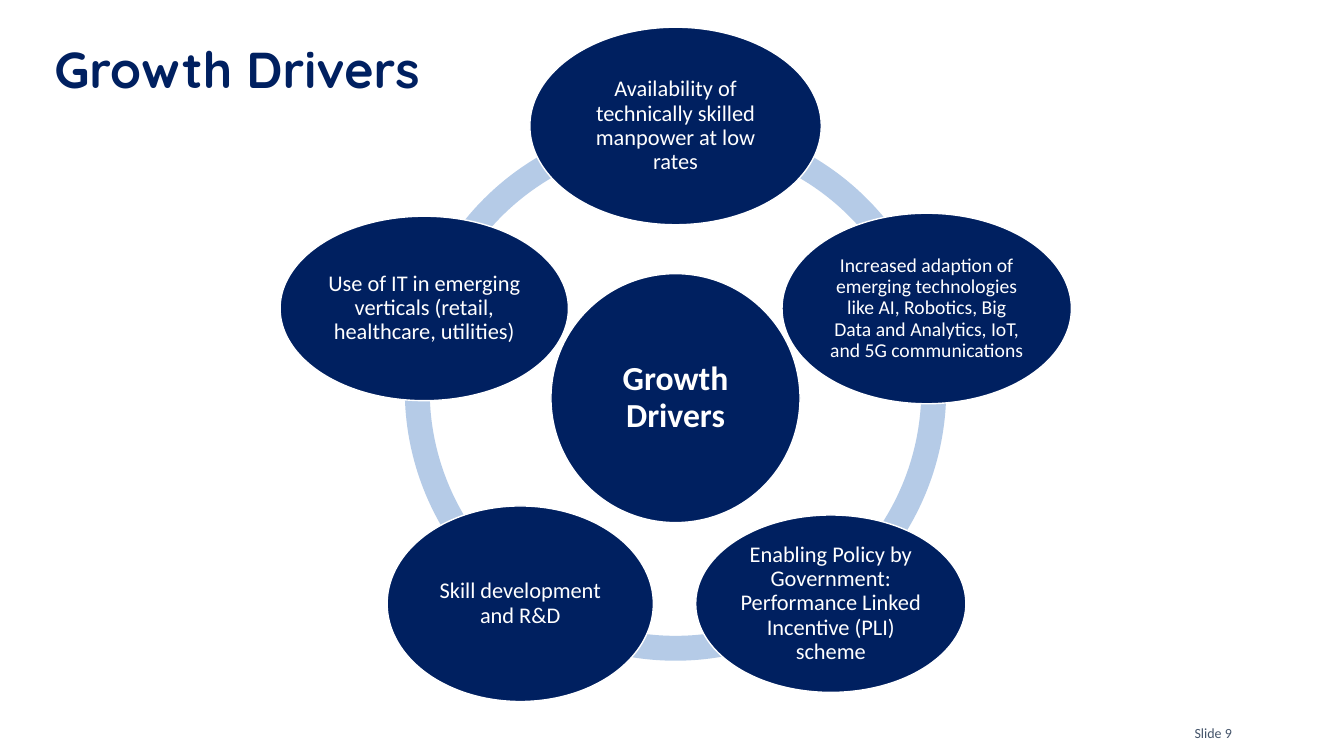
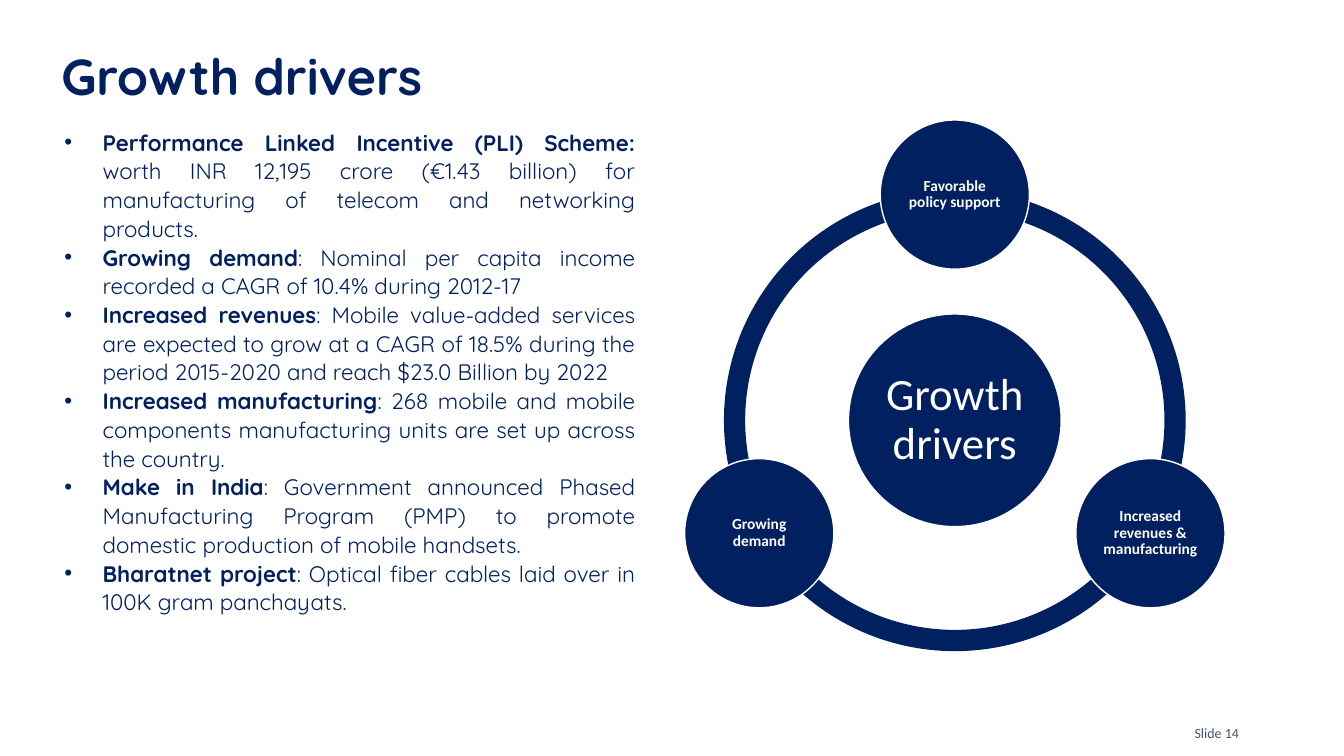
"""Build two growth driver slides, each with a hub-and-ring diagram."""
import dataclasses
import math
import typing

import pptx
import pptx.dml.color
import pptx.enum.shapes
import pptx.enum.text
import pptx.oxml.ns
import pptx.shapes.autoshape
import pptx.slide
import pptx.text.text
import pptx.util
from lxml import etree
from pptx.util import Inches

NAVY = pptx.dml.color.RGBColor(0x00, 0x20, 0x60)
PALE_BLUE = pptx.dml.color.RGBColor(0xB5, 0xCB, 0xE7)
SLATE = pptx.dml.color.RGBColor(0x44, 0x54, 0x6A)
WHITE = pptx.dml.color.RGBColor(0xFF, 0xFF, 0xFF)
HEADING_FONT = "Quicksand"
LABEL_FONT = "Calibri"
RING_THICKNESS = 0.046
BULLET_INDENT = 0.38

Shapes = pptx.enum.shapes.MSO_SHAPE
Align = pptx.enum.text.PP_ALIGN
Anchor = pptx.enum.text.MSO_ANCHOR


@dataclasses.dataclass(frozen=True)
class Oval:
    text: str
    width: float
    height: float
    size: float
    bold: bool = False


@dataclasses.dataclass(frozen=True)
class Cycle:
    center_x: float
    center_y: float
    ring_diameter: float
    orbit_radius: float
    ring_color: pptx.dml.color.RGBColor
    hub: Oval
    nodes: tuple[Oval, ...]
    hub_drop: float = 0


@dataclasses.dataclass(frozen=True)
class Bullet:
    lead: str
    detail: str


DRIVERS = Cycle(
    6.7, 3.87, 5.37, 2.62, PALE_BLUE,
    Oval("Growth Drivers", 2.47, 2.47, 24, True),
    (
        Oval("Availability of technically skilled manpower at low rates", 2.89, 1.96, 16),
        Oval("Increased adaption of emerging technologies like AI, Robotics, Big Data "
             "and Analytics, IoT, and 5G communications", 2.87, 1.89, 14),
        Oval("Enabling Policy by Government: Performance Linked Incentive (PLI) scheme",
             2.68, 1.76, 16),
        Oval("Skill development and R&D", 2.64, 1.94, 16),
        Oval("Use of IT in emerging verticals (retail, healthcare, utilities)", 2.86, 1.83, 16),
    ),
    hub_drop=0.08,
)

TELECOM_DRIVERS = Cycle(
    9.47, 4.17, 4.58, 2.24, NAVY,
    Oval("Growth drivers", 2.11, 2.11, 32),
    tuple(
        Oval(text, 1.48, 1.48, 11, True)
        for text in ("Favorable policy support", "Increased revenues & manufacturing",
                     "Growing demand")
    ),
)

BULLETS = (
    Bullet("Performance Linked Incentive (PLI) Scheme:",
           " worth INR 12,195 crore (€1.43 billion) for manufacturing of telecom and "
           "networking products."),
    Bullet("Growing demand",
           ": Nominal per capita income recorded a CAGR of 10.4% during 2012-17"),
    Bullet("Increased revenues",
           ": Mobile value-added services are expected to grow at a CAGR of 18.5% during "
           "the period 2015-2020 and reach $23.0 Billion by 2022"),
    Bullet("Increased manufacturing",
           ": 268 mobile and mobile components manufacturing units are set up across "
           "the country."),
    Bullet("Make in India",
           ": Government announced Phased Manufacturing Program (PMP) to promote domestic "
           "production of mobile handsets."),
    Bullet("Bharatnet project", ": Optical fiber cables laid over in 100K gram panchayats."),
)


def add_run(
    paragraph: pptx.text.text._Paragraph, text: str, *, size: float, font: str,
    color: pptx.dml.color.RGBColor, bold: bool = False,
) -> None:
    """Append formatted text to a paragraph."""
    run = paragraph.add_run()
    run.text = text
    run.font.size = pptx.util.Pt(size)
    run.font.name = font
    run.font.bold = bold
    run.font.color.rgb = color


def add_filled_shape(
    slide: pptx.slide.Slide, kind: Shapes, left: float, top: float, width: float,
    height: float, fill: pptx.dml.color.RGBColor,
    line: typing.Optional[pptx.dml.color.RGBColor] = None,
) -> pptx.shapes.autoshape.Shape:
    """Add a flat preset shape with an optional one-point outline."""
    shape = slide.shapes.add_shape(kind, Inches(left), Inches(top), Inches(width), Inches(height))
    shape.shadow.inherit = False
    shape.fill.solid()
    shape.fill.fore_color.rgb = fill
    if line is None:
        shape.line.fill.background()
    else:
        shape.line.color.rgb = line
        shape.line.width = pptx.util.Pt(1)
    return shape


def add_text(
    slide: pptx.slide.Slide, text: str, left: float, top: float, width: float, height: float,
    *, size: float, font: str, color: pptx.dml.color.RGBColor, bold: bool = False,
    wrap: bool = True, anchor: Anchor = Anchor.TOP,
) -> None:
    """Add a text box holding one line of text."""
    box = slide.shapes.add_textbox(Inches(left), Inches(top), Inches(width), Inches(height))
    frame = box.text_frame
    frame.word_wrap = wrap
    frame.vertical_anchor = anchor
    add_run(frame.paragraphs[0], text, size=size, font=font, color=color, bold=bold)


def add_oval(slide: pptx.slide.Slide, oval: Oval, center_x: float, center_y: float) -> None:
    """Draw a labelled oval around its center."""
    shape = add_filled_shape(
        slide, Shapes.OVAL, center_x - oval.width / 2, center_y - oval.height / 2,
        oval.width, oval.height, NAVY, WHITE,
    )
    frame = shape.text_frame
    frame.word_wrap = True
    frame.vertical_anchor = Anchor.MIDDLE
    frame.margin_left = frame.margin_right = Inches(0.02)
    frame.margin_top = frame.margin_bottom = Inches(0.02)
    paragraph = frame.paragraphs[0]
    paragraph.alignment = Align.CENTER
    paragraph.line_spacing = 0.9
    add_run(paragraph, oval.text, size=oval.size, font=LABEL_FONT, color=WHITE, bold=oval.bold)


def add_cycle(slide: pptx.slide.Slide, cycle: Cycle) -> None:
    """Draw the ring, the hub and the nodes spaced evenly clockwise from the top."""
    diameter = cycle.ring_diameter
    ring = add_filled_shape(
        slide, Shapes.DONUT, cycle.center_x - diameter / 2, cycle.center_y - diameter / 2,
        diameter, diameter, cycle.ring_color,
    )
    ring.adjustments[0] = RING_THICKNESS
    add_oval(slide, cycle.hub, cycle.center_x, cycle.center_y + cycle.hub_drop)
    for index, node in enumerate(cycle.nodes):
        angle = math.tau * index / len(cycle.nodes)
        add_oval(
            slide, node, cycle.center_x + cycle.orbit_radius * math.sin(angle),
            cycle.center_y - cycle.orbit_radius * math.cos(angle),
        )


def add_bullets(slide: pptx.slide.Slide, bullets: tuple[Bullet, ...]) -> None:
    """Add the justified bullet list with bold lead-ins."""
    panel = add_filled_shape(slide, Shapes.RECTANGLE, 0.54, 1.21, 5.86, 5.73, WHITE, WHITE)
    frame = panel.text_frame
    frame.word_wrap = True
    frame.vertical_anchor = Anchor.TOP
    for index, bullet in enumerate(bullets):
        paragraph = frame.add_paragraph() if index else frame.paragraphs[0]
        paragraph.alignment = Align.JUSTIFY
        paragraph.line_spacing = 1.07
        properties = paragraph._p.get_or_add_pPr()
        properties.set("marL", str(Inches(BULLET_INDENT)))
        properties.set("indent", str(-Inches(BULLET_INDENT)))
        for tag, name, value in (("a:buFont", "typeface", "Arial"), ("a:buChar", "char", "•")):
            etree.SubElement(properties, pptx.oxml.ns.qn(tag)).set(name, value)
        for text, bold in ((bullet.lead, True), (bullet.detail, False)):
            add_run(paragraph, text, size=16, font=HEADING_FONT, color=NAVY, bold=bold)


def add_slide(
    presentation: pptx.presentation.Presentation, title: str, number: int,
    title_left: float, title_top: float,
) -> pptx.slide.Slide:
    """Add a blank slide with its title and slide number."""
    slide = presentation.slides.add_slide(presentation.slide_layouts[6])
    add_text(slide, f"Slide {number}", 11.75, 7.14, 0.66, 0.27,
             size=10, font=LABEL_FONT, color=SLATE, wrap=False)
    add_text(slide, title, title_left, title_top, 11.9, 0.69, size=36, font=HEADING_FONT,
             color=NAVY, bold=True, anchor=Anchor.MIDDLE)
    return slide


def main() -> None:
    """Build and save the presentation."""
    presentation = pptx.Presentation()
    presentation.slide_width = Inches(13.33)
    presentation.slide_height = Inches(7.5)
    add_cycle(add_slide(presentation, "Growth Drivers", 9, 0.44, 0.33), DRIVERS)
    telecom = add_slide(presentation, "Growth drivers", 14, 0.51, 0.4)
    add_cycle(telecom, TELECOM_DRIVERS)
    add_bullets(telecom, BULLETS)
    presentation.save("out.pptx")


if __name__ == "__main__":
    main()
